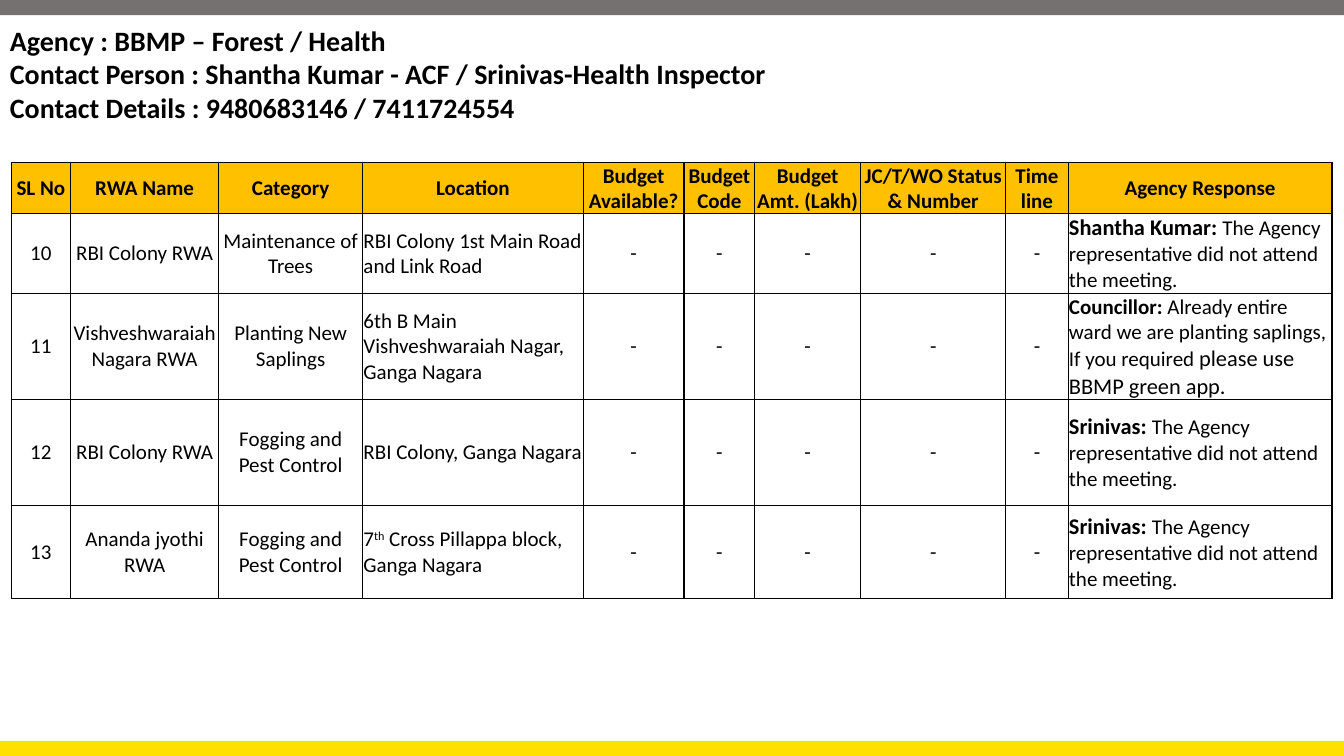
from lxml.etree import SubElement
from pptx import Presentation
from pptx.dml.color import RGBColor
from pptx.enum.shapes import MSO_SHAPE as Shape
from pptx.enum.text import MSO_ANCHOR as Anchor, PP_ALIGN as Align
from pptx.oxml.ns import qn
from pptx.util import Cm, Pt

WIDE, HIGH, BAR = 33.87, 19.05, 0.38
BLACK, GREY, YELLOW, AMBER = "000000", "767171", "FFE000", "FFC000"

TITLE = [
    "Agency : BBMP – Forest / Health",
    "Contact Person : Shantha Kumar - ACF / Srinivas-Health Inspector",
    "Contact Details : 9480683146 / 7411724554",
]
HEADS = ["SL No", "RWA Name", "Category", "Location", "Budget Available?",
         "Budget Code", "Budget Amt. (Lakh)", "JC/T/WO Status & Number",
         "Time line", "Agency Response"]
WIDTHS = [1.5, 3.73, 3.63, 5.56, 2.54, 1.78, 2.67, 3.66, 1.57, 6.65]
HEIGHTS = [1.22, 2.01, 2.67, 2.67, 2.36]
LEFT_COLS = (3, 9)
DASHES = ["-"] * 5


def absent(name):
    """Runs of a reply: text, size, bold."""
    return [(f"{name}: ", 16, True),
            ("The Agency representative did not attend the meeting.", 15, False)]


ROWS = [
    ["10", "RBI Colony RWA", "Maintenance of Trees",
     "RBI Colony 1st Main Road and Link Road", *DASHES, absent("Shantha Kumar")],
    ["11", "Vishveshwaraiah Nagara RWA", "Planting New Saplings",
     "6th B Main Vishveshwaraiah Nagar, Ganga Nagara", *DASHES,
     [("Councillor: ", 15, True),
      ("Already entire ward we are planting saplings, If you required ", 15, False),
      ("please use BBMP green app.", 16, False)]],
    ["12", "RBI Colony RWA", "Fogging and Pest Control",
     "RBI Colony, Ganga Nagara", *DASHES, absent("Srinivas")],
    ["13", "Ananda jyothi RWA", "Fogging and Pest Control",
     [("7", 15, False), ("th", 15, False, 30000),
      (" Cross Pillappa block, Ganga Nagara", 15, False)],
     *DASHES, absent("Srinivas")],
]


def color(code):
    return RGBColor.from_string(code)


def style(run, size, bold, lift=0):
    font = run.font
    font.name, font.size, font.bold = "Calibri", Pt(size), bold
    font.color.rgb = color(BLACK)
    if lift:
        run._r.get_or_add_rPr().set("baseline", str(lift))


def add_bar(slide, top, code):
    bar = slide.shapes.add_shape(Shape.RECTANGLE, 0, Cm(top), Cm(WIDE), Cm(BAR))
    bar.shadow.inherit = False
    bar.fill.solid()
    bar.fill.fore_color.rgb = color(code)
    bar.line.fill.background()


def add_title(slide, left, top, width, height):
    box = slide.shapes.add_textbox(Cm(left), Cm(top), Cm(width), Cm(height))
    frame = box.text_frame
    frame.word_wrap = True
    frame.text = "\n".join(TITLE)
    for para in frame.paragraphs:
        style(para.runs[0], 20, True)


def add_edges(cell):
    props = cell._tc.get_or_add_tcPr()
    for side in ("lnL", "lnR", "lnT", "lnB"):
        line = SubElement(props, qn(f"a:{side}"), w=str(Pt(1)))
        fill = SubElement(line, qn("a:solidFill"))
        SubElement(fill, qn("a:srgbClr"), val=BLACK)


def fill_cell(cell, text, head, align):
    cell.margin_left = cell.margin_right = cell.margin_top = Cm(0.02)
    cell.margin_bottom = 0
    cell.vertical_anchor = Anchor.MIDDLE
    add_edges(cell)
    if head:
        cell.fill.solid()
        cell.fill.fore_color.rgb = color(AMBER)
    else:
        cell.fill.background()
    para = cell.text_frame.paragraphs[0]
    para.alignment = align
    parts = [(text, 15, head)] if isinstance(text, str) else text
    for words, *look in parts:
        run = para.add_run()
        run.text = words
        style(run, *look)


def add_grid(slide, left, top):
    """Table of requests, sized by its columns and rows."""
    data = [HEADS, *ROWS]
    table = slide.shapes.add_table(
        len(data), len(HEADS), Cm(left), Cm(top),
        Cm(sum(WIDTHS)), Cm(sum(HEIGHTS))).table
    table.first_row = table.horz_banding = False
    for col, width in zip(table.columns, WIDTHS):
        col.width = Cm(width)
    for row, height in zip(table.rows, HEIGHTS):
        row.height = Cm(height)
    for r, line in enumerate(data):
        for c, text in enumerate(line):
            left_side = r > 0 and c in LEFT_COLS
            align = Align.LEFT if left_side else Align.CENTER
            fill_cell(table.cell(r, c), text, r == 0, align)


def main():
    deck = Presentation()
    deck.slide_width, deck.slide_height = Cm(WIDE), Cm(HIGH)
    slide = deck.slides.add_slide(deck.slide_layouts[6])
    add_bar(slide, HIGH - BAR, YELLOW)
    add_bar(slide, 0, GREY)
    add_title(slide, 0, 0.46, WIDE, 2.82)
    add_grid(slide, 0.28, 4.09)
    deck.save("out.pptx")


if __name__ == "__main__":
    main()
